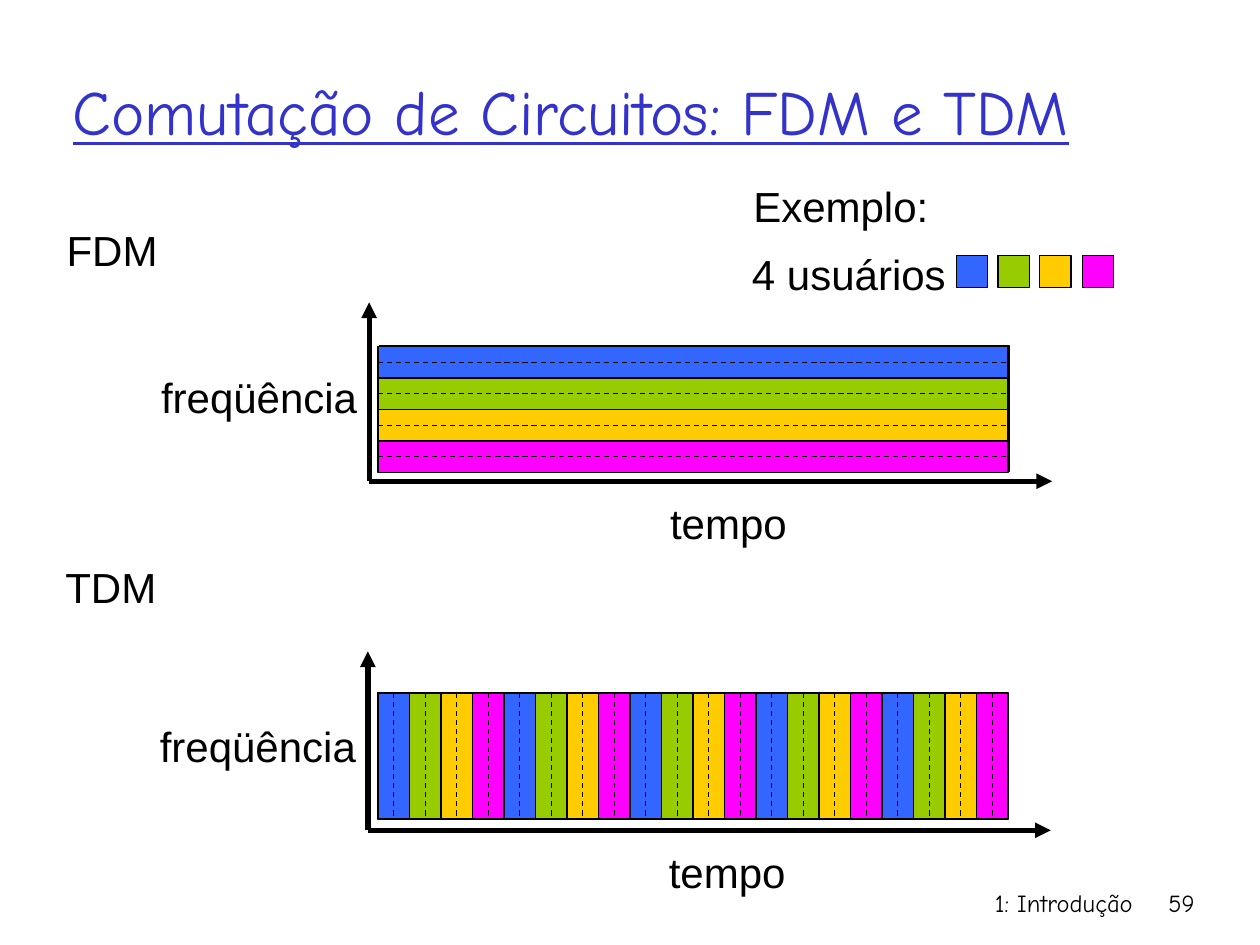
import pptx
import pptx.util
from lxml import etree
from pptx.dml.color import RGBColor
from pptx.enum.dml import MSO_LINE
from pptx.enum.shapes import MSO_CONNECTOR, MSO_SHAPE
from pptx.enum.text import MSO_ANCHOR, PP_ALIGN
from pptx.oxml.ns import qn

PX = 9144  # 100 px to the inch
BLACK = RGBColor(0x00, 0x00, 0x00)
TITLE_BLUE = RGBColor(0x33, 0x33, 0xCC)
TEAL = RGBColor(0x00, 0xCC, 0x99)
USER_COLOURS = [
    RGBColor(0x33, 0x66, 0xFF),
    RGBColor(0x99, 0xCC, 0x00),
    RGBColor(0xFF, 0xCC, 0x00),
    RGBColor(0xFF, 0x00, 0xFF),
]

LABEL_STYLE = dict(size=24, font="Arial")
FOOTER_STYLE = dict(size=14, font="Comic Neue", align=PP_ALIGN.RIGHT, wrap=True)
TITLE_STYLE = dict(size=36, font="Comic Neue", colour=TITLE_BLUE, underline=True,
                   anchor=MSO_ANCHOR.MIDDLE, wrap=True)

# text, (left, top, width, height), style
TEXTS = [
    ("1: Introdução", (592, 700, 317, 50), FOOTER_STYLE),
    ("59", (908, 700, 50, 50), FOOTER_STYLE),
    ("Comutação de Circuitos: FDM e TDM", (48, 25, 926, 125), TITLE_STYLE),
    ("Exemplo:", (588, 138, 159, 50), LABEL_STYLE),
    ("4 usuários", (587, 192, 174, 50), LABEL_STYLE),
]

# name and its place, axis origin, backing corner, plot corner, band direction
CHARTS = [
    dict(name="FDM", name_at=(43, 173), origin=(293, 382),
         backing=(301, 274), plot=(300, 275), across_time=False),
    dict(name="TDM", name_at=(42, 441), origin=(292, 659),
         backing=(300, 550), plot=(300, 550), across_time=True),
]
PLOT_WIDTH, PLOT_HEIGHT = 500, 100
BAND = 25
AXIS_WIDTH, AXIS_HEIGHT = 542, 142
KEY_LEFTS, KEY_TOP = (759, 792, 825, 859), 203

deck = pptx.Presentation()
deck.slide_width, deck.slide_height = 1000 * PX, 750 * PX
page = deck.slides.add_slide(deck.slide_layouts[6])


def add_text(text, place, size, font, colour=BLACK, underline=None,
             align=PP_ALIGN.LEFT, anchor=MSO_ANCHOR.TOP, wrap=False):
    box = page.shapes.add_textbox(*(n * PX for n in place))
    frame = box.text_frame
    frame.word_wrap = wrap
    frame.vertical_anchor = anchor
    para = frame.paragraphs[0]
    para.alignment = align
    span = para.add_run()
    span.text = text
    span.font.size = pptx.util.Pt(size)
    span.font.name = font
    span.font.color.rgb = colour
    span.font.underline = underline


def add_rectangle(left, top, width, height, colour):
    box = page.shapes.add_shape(MSO_SHAPE.RECTANGLE,
                                *(n * PX for n in (left, top, width, height)))
    box.shadow.inherit = False
    box.fill.solid()
    box.fill.fore_color.rgb = colour
    box.line.color.rgb = BLACK
    box.line.width = pptx.util.Pt(0.75)
    return box


def add_line(start, end, width=0.75):
    line = page.shapes.add_connector(MSO_CONNECTOR.STRAIGHT,
                                     *(n * PX for n in (*start, *end)))
    line.line.color.rgb = BLACK
    line.line.width = pptx.util.Pt(width)
    etree.SubElement(line._element.spPr, qn("a:effectLst"))
    return line


def add_axis(start, end):
    axis = add_line(start, end, width=3)
    etree.SubElement(axis.line._get_or_add_ln(), qn("a:tailEnd"), type="triangle")


def add_bands(left, top, across_time):
    """Fill the plot with user bands, their borders and dashed middle lines."""
    if across_time:
        count, step, size = PLOT_WIDTH // BAND, (BAND, 0), (BAND, PLOT_HEIGHT)
        length, sides = (0, PLOT_HEIGHT), (0, 2)
    else:
        count, step, size = PLOT_HEIGHT // BAND, (0, BAND), (PLOT_WIDTH, BAND)
        length, sides = (PLOT_WIDTH, 0), (1, 3)
    corners = [(left + i * step[0], top + i * step[1]) for i in range(count)]
    bands = [add_rectangle(*corner, *size, USER_COLOURS[i % len(USER_COLOURS)])
             for i, corner in enumerate(corners)]
    for x, y in corners[1:]:
        add_line((x, y), (x + length[0], y + length[1]))
    for (x, y), band in zip(corners, bands):
        middle = add_line((x, y), (x + length[0], y + length[1]))
        middle.begin_connect(band, sides[0])
        middle.end_connect(band, sides[1])
        middle.line.dash_style = MSO_LINE.DASH


def add_chart_drawing(name, name_at, origin, backing, plot, across_time):
    x, y = origin
    add_text(name, (*name_at, 92, 50), **LABEL_STYLE)
    add_axis(origin, (x, y - AXIS_HEIGHT))
    add_text("freqüência", (x - 175, y - 92, 176, 50), **LABEL_STYLE)
    add_axis(origin, (x + AXIS_WIDTH, y))
    add_text("tempo", (x + 229, y + 8, 113, 50), **LABEL_STYLE)
    add_rectangle(*backing, PLOT_WIDTH, PLOT_HEIGHT, TEAL)
    add_bands(*plot, across_time)


for text, place, style in TEXTS:
    add_text(text, place, **style)
for chart in CHARTS:
    add_chart_drawing(**chart)
for key_left, user_colour in zip(KEY_LEFTS, USER_COLOURS):
    add_rectangle(key_left, KEY_TOP, BAND, BAND, user_colour)

deck.save("out.pptx")
